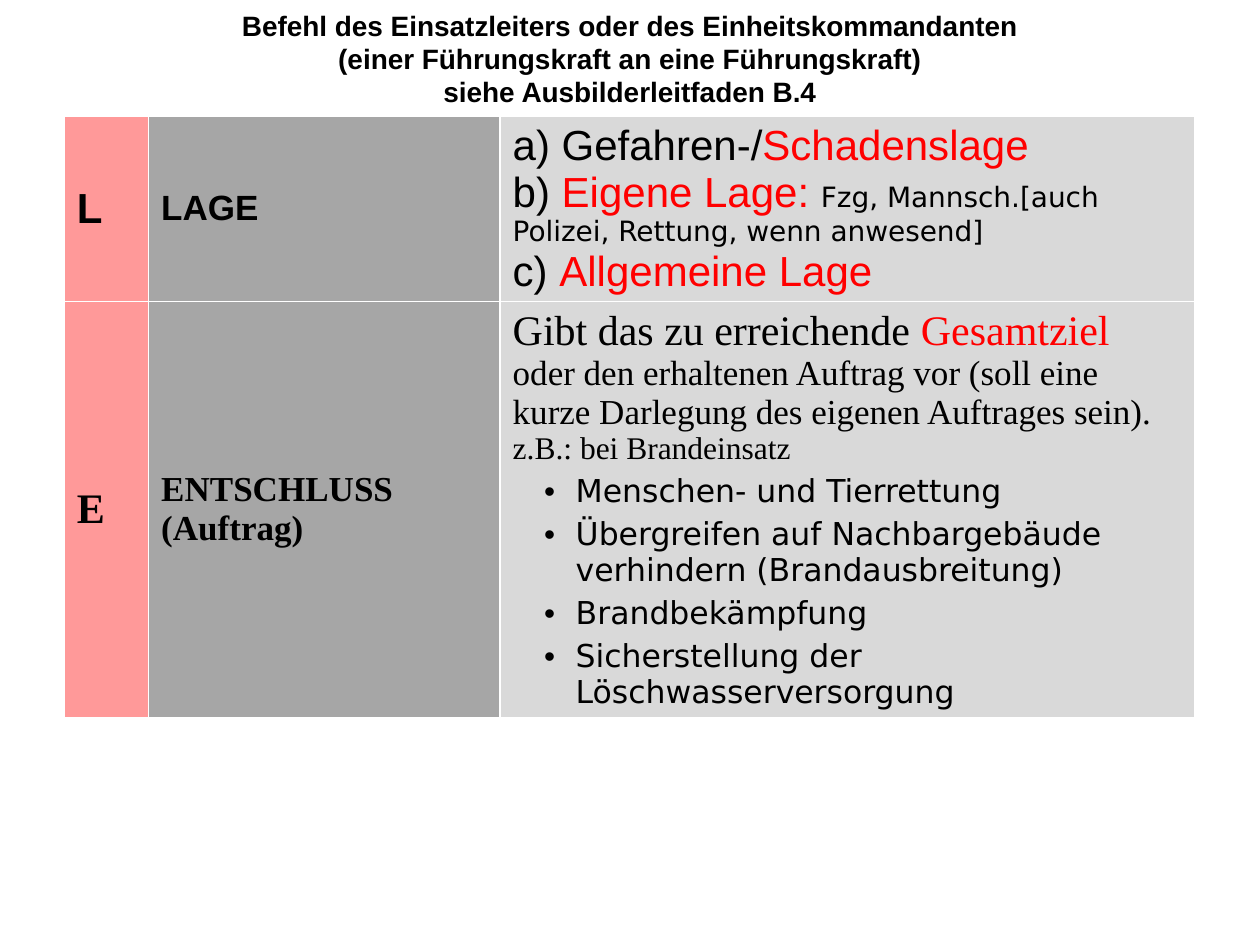
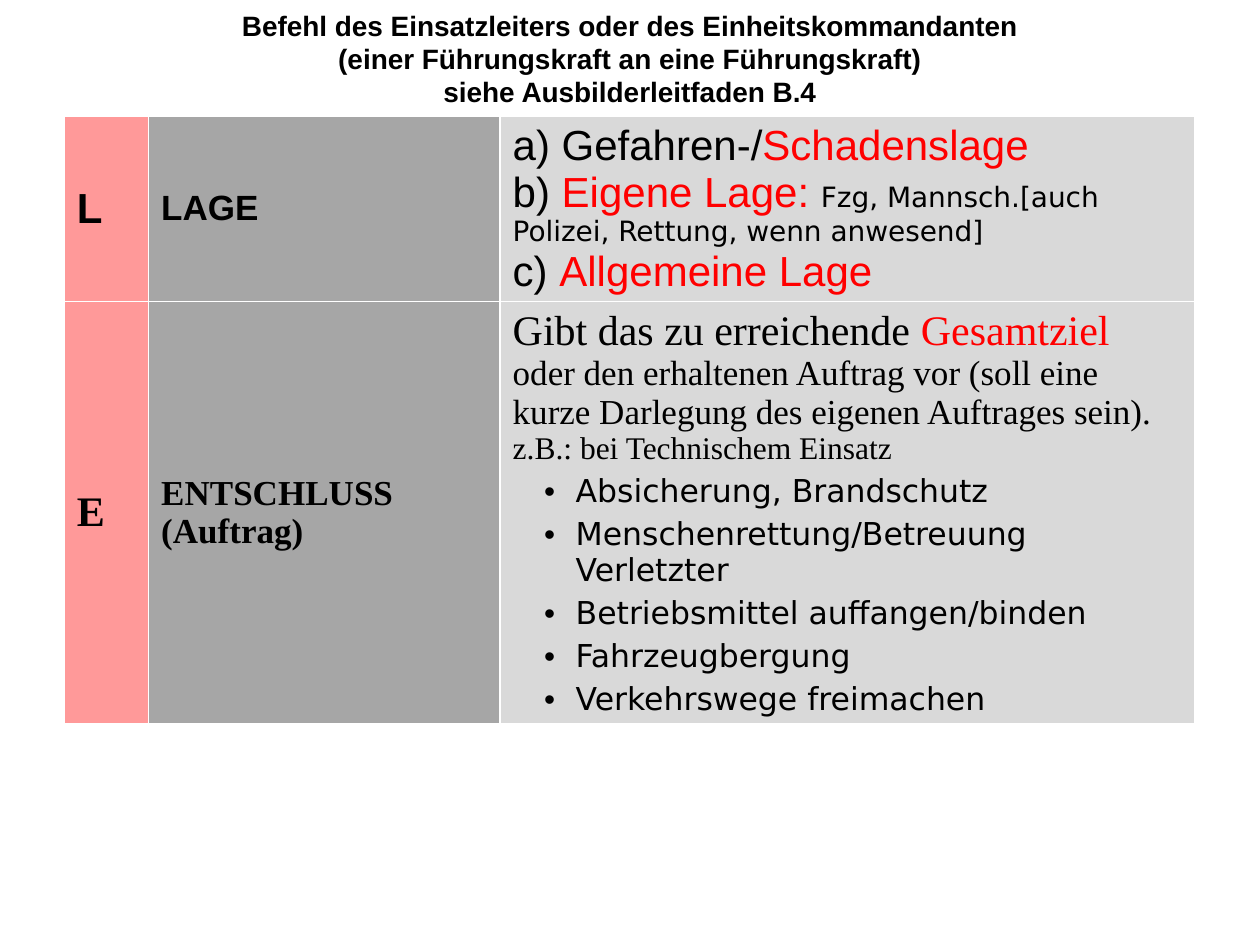
from lxml.etree import SubElement
from pptx import Presentation
from pptx.dml.color import RGBColor
from pptx.enum.text import MSO_ANCHOR, MSO_AUTO_SIZE, PP_ALIGN
from pptx.oxml.ns import qn
from pptx.util import Inches, Pt

BLACK = RGBColor(0x00, 0x00, 0x00)
WHITE = RGBColor(0xFF, 0xFF, 0xFF)
RED = RGBColor(0xFF, 0x00, 0x00)
PINK = RGBColor(0xFF, 0x99, 0x99)
GREY = RGBColor(0xA6, 0xA6, 0xA6)
LIGHT_GREY = RGBColor(0xD9, 0xD9, 0xD9)

SANS = "Arial"
SERIF = "Times New Roman"
DEJAVU = "DejaVu Sans"

TITLE = (
    "Befehl des Einsatzleiters oder des Einheitskommandanten\n"
    "(einer Führungskraft an eine Führungskraft)\v"
    "siehe Ausbilderleitfaden B.4"
)
COLUMN_WIDTHS = [0.67, 2.79, 5.51]
COLUMN_FILLS = [PINK, GREY, LIGHT_GREY]
LAGE_HEIGHT = 1.47

LAGE = [
    [("a) Gefahren-/", 24, SANS, BLACK), ("Schadenslage", 24, SANS, RED)],
    [
        ("b) ", 24, SANS, BLACK),
        ("Eigene Lage: ", 24, SANS, RED),
        ("Fzg, Mannsch.[auch Polizei, Rettung, wenn anwesend]", 16, DEJAVU, BLACK),
    ],
    [("c) ", 24, SANS, BLACK), ("Allgemeine Lage", 24, SANS, RED)],
]
GESAMTZIEL = [
    ("Gibt das zu erreichende ", 24, SERIF, BLACK),
    ("Gesamtziel ", 24, SERIF, RED),
    (
        "oder den erhaltenen Auftrag vor (soll eine kurze Darlegung des eigenen Auftrages sein).",
        20, SERIF, BLACK,
    ),
]
EXAMPLES = [
    (
        "z.B.: bei Brandeinsatz",
        [
            "Menschen- und Tierrettung",
            "Übergreifen auf Nachbargebäude verhindern (Brandausbreitung)",
            "Brandbekämpfung",
            "Sicherstellung der Löschwasserversorgung",
        ],
        3.29,
    ),
    (
        "z.B.: bei Technischem Einsatz",
        [
            "Absicherung, Brandschutz",
            "Menschenrettung/Betreuung Verletzter",
            "Betriebsmittel auffangen/binden",
            "Fahrzeugbergung",
            "Verkehrswege freimachen",
        ],
        3.35,
    ),
]


def add_runs(p, segments, bold=False):
    for text, size, font, color in segments:
        r = p.add_run()
        r.text = text
        r.font.size = Pt(size)
        r.font.name = font
        r.font.color.rgb = color
        r.font.bold = bold


def add_bullet(p):
    p.level = 1
    p.space_before = Pt(3.6)
    pPr = p._p.get_or_add_pPr()
    pPr.set("marL", str(Inches(0.5)))
    pPr.set("indent", str(Inches(-0.25)))
    SubElement(pPr, qn("a:buFont")).set("typeface", SANS)
    SubElement(pPr, qn("a:buChar")).set("char", "•")


prs = Presentation()
prs.slide_width = Inches(10)
prs.slide_height = Inches(7.5)

for example, goals, entschluss_height in EXAMPLES:
    s = prs.slides.add_slide(prs.slide_layouts[5])

    title = s.shapes.title
    title.left, title.top = Inches(0.51), Inches(0.02)
    title.width, title.height = Inches(8.98), Inches(0.98)
    title.fill.solid()
    title.fill.fore_color.rgb = WHITE
    tf = title.text_frame
    tf.text = TITLE
    tf.auto_size = MSO_AUTO_SIZE.NONE
    tf.vertical_anchor = MSO_ANCHOR.TOP
    for p in tf.paragraphs:
        p.alignment = PP_ALIGN.CENTER
        p.line_spacing = Pt(19)
        for r in p.runs:
            r.font.size = Pt(16)
            r.font.name = SANS
            r.font.bold = True
            r.font.color.rgb = BLACK

    table = s.shapes.add_table(
        2, 3, Inches(0.51), Inches(0.92),
        Inches(8.97), Inches(LAGE_HEIGHT + entschluss_height),
    ).table
    table.first_row = False
    table.horz_banding = False
    for column, width in zip(table.columns, COLUMN_WIDTHS):
        column.width = Inches(width)
    for row, height in zip(table.rows, [LAGE_HEIGHT, entschluss_height]):
        row.height = Inches(height)

    entschluss = [GESAMTZIEL, [(example, 18, SERIF, BLACK)]]
    entschluss += [[(goal, 18, DEJAVU, BLACK)] for goal in goals]
    rows = [
        ("L", "LAGE", SANS, LAGE),
        ("E", "ENTSCHLUSS (Auftrag)", SERIF, entschluss),
    ]
    for row, (letter, heading, font, details) in zip(table.rows, rows):
        contents = [
            [[(letter, 24, font, BLACK)]],
            [[(heading, 20, font, BLACK)]],
            details,
        ]
        for cell, fill, paragraphs in zip(row.cells, COLUMN_FILLS, contents):
            cell.fill.solid()
            cell.fill.fore_color.rgb = fill
            cell.vertical_anchor = MSO_ANCHOR.MIDDLE
            tf = cell.text_frame
            for i, segments in enumerate(paragraphs):
                p = tf.add_paragraph() if i else tf.paragraphs[0]
                if paragraphs is entschluss and i >= 2:
                    add_bullet(p)
                add_runs(p, segments, bold=paragraphs is not details)

prs.save("out.pptx")
